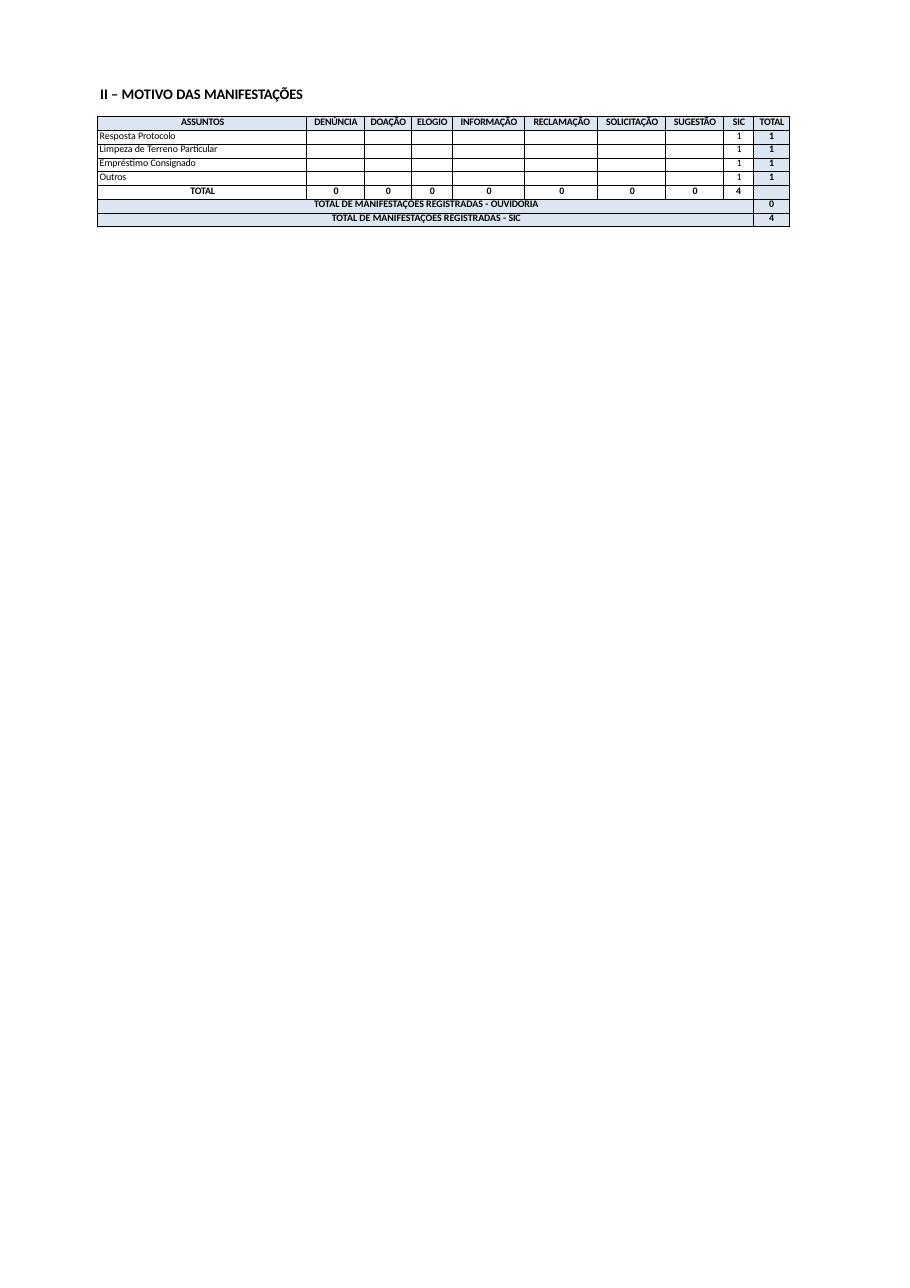
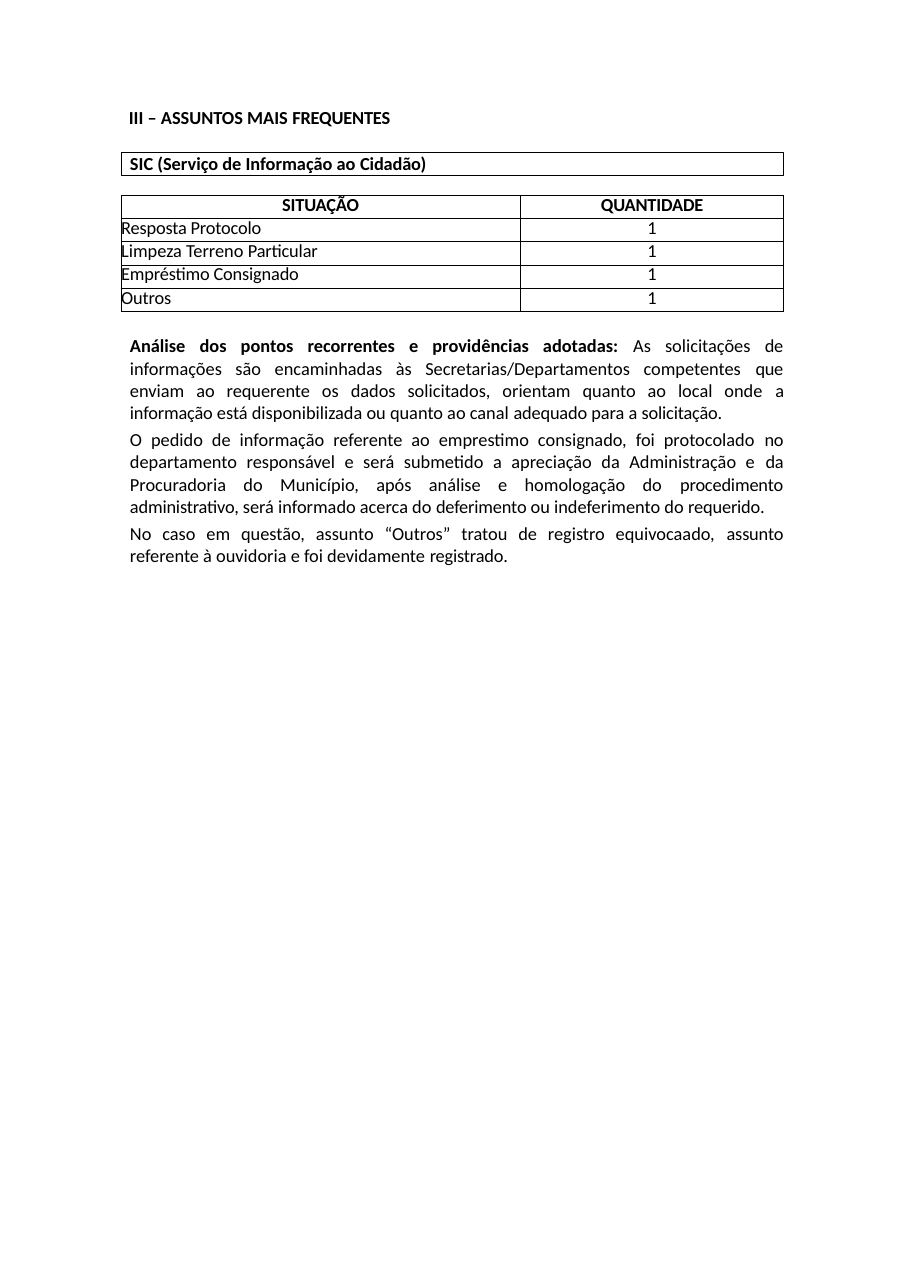
from dataclasses import dataclass
from typing import Any

from lxml import etree
from pptx import Presentation, util as u
from pptx.dml import color
from pptx.enum import shapes, text
from pptx.oxml import ns

# Shared look: lengths are px, 200 to the inch
PX = 4572
FONT = "Calibri"
BLACK = "000000"
BAND = "DCE6F0"
LEFT, CENTER, JUSTIFY = text.PP_ALIGN.LEFT, text.PP_ALIGN.CENTER, text.PP_ALIGN.JUSTIFY


@dataclass(frozen=True)
class Run:
    text: str
    bold: bool = False
    spacing: float = 0
    ends_line: bool = False


@dataclass(frozen=True)
class Style:
    size: float
    align: Any = LEFT
    indent: int = 0
    line: Any = 1.0
    before: float = 0


@dataclass(frozen=True)
class Cell:
    runs: tuple[Run, ...] = ()
    align: Any = CENTER
    indent: int = 0
    fill: str = ""
    span: int = 1


@dataclass(frozen=True)
class Grid:
    left: int
    top: int
    columns: tuple[int, ...]
    row_height: int
    size: float
    line: float
    border: float


def px(length: int) -> u.Emu:
    return u.Emu(length * PX)


def rgb(value: str) -> color.RGBColor:
    return color.RGBColor.from_string(value)


def phrase(plain: str, tight: str, bold: bool = False, spacing: float = -0.1) -> tuple[Run, ...]:
    """Words whose last part is set a little tighter."""
    runs = (Run(plain, bold), Run(tight, bold, spacing))
    return tuple(run for run in runs if run.text)


# Text
def write(paragraph: Any, runs: tuple[Run, ...], style: Style) -> None:
    paragraph.alignment = style.align
    paragraph.line_spacing = style.line
    paragraph.space_before = u.Pt(style.before)
    properties = paragraph._p.get_or_add_pPr()
    properties.set("marL", str(px(style.indent)))
    properties.set("indent", "0")
    size = str(int(style.size * 100))
    for item in runs:
        run = paragraph.add_run()
        run.text = item.text
        run.font.name = FONT
        run.font.size = u.Pt(style.size)
        run.font.bold = item.bold
        run.font.color.rgb = rgb(BLACK)
        if item.spacing:
            run._r.get_or_add_rPr().set("spc", str(round(item.spacing * 100)))
        if item.ends_line:
            line_break = etree.SubElement(paragraph._p, ns.qn("a:br"))
            etree.SubElement(line_break, ns.qn("a:rPr"), sz=size)
    if not runs:
        etree.SubElement(paragraph._p, ns.qn("a:endParaRPr"), sz=size)


def prepare_frame(shape: Any, top_inset: int = 0) -> Any:
    frame = shape.text_frame
    frame.word_wrap = True
    frame.auto_size = text.MSO_AUTO_SIZE.SHAPE_TO_FIT_TEXT
    frame.vertical_anchor = text.MSO_ANCHOR.TOP
    frame.margin_left = frame.margin_right = frame.margin_bottom = 0
    frame.margin_top = px(top_inset)
    return frame


def add_titled_slide(presentation: Any, runs: tuple[Run, ...], style: Style,
                     box: tuple[int, int, int, int], top_inset: int) -> Any:
    slide = presentation.slides.add_slide(presentation.slide_layouts[5])
    title = slide.shapes.title
    title.left, title.top, title.width, title.height = map(px, box)
    write(prepare_frame(title, top_inset).paragraphs[0], runs, style)
    return slide


# Tables
def add_borders(cell: Any, width: float) -> None:
    properties = cell._tc.get_or_add_tcPr()
    for side in ("lnL", "lnR", "lnT", "lnB"):
        line = etree.SubElement(properties, ns.qn(f"a:{side}"), w=str(u.Pt(width)))
        fill = etree.SubElement(line, ns.qn("a:solidFill"))
        etree.SubElement(fill, ns.qn("a:srgbClr"), val=BLACK)


def format_cell(cell: Any, content: Cell, grid: Grid) -> None:
    cell.margin_left = cell.margin_right = cell.margin_top = cell.margin_bottom = 0
    cell.vertical_anchor = text.MSO_ANCHOR.TOP
    add_borders(cell, grid.border)
    if content.fill:
        cell.fill.solid()
        cell.fill.fore_color.rgb = rgb(content.fill)
    else:
        cell.fill.background()
    style = Style(grid.size, content.align, content.indent, u.Pt(grid.line))
    write(cell.text_frame.paragraphs[0], content.runs, style)


def add_grid(slide: Any, grid: Grid, rows: list[list[Cell]]) -> None:
    table = slide.shapes.add_table(
        len(rows), len(grid.columns), px(grid.left), px(grid.top),
        px(sum(grid.columns)), px(grid.row_height * len(rows))).table
    table.first_row = table.horz_banding = False
    for column, width in zip(table.columns, grid.columns):
        column.width = px(width)
    for row_index, contents in enumerate(rows):
        table.rows[row_index].height = px(grid.row_height)
        column_index = 0
        for content in contents:
            first = table.cell(row_index, column_index)
            for offset in range(content.span):
                covered = Cell(fill=content.fill)
                format_cell(table.cell(row_index, column_index + offset),
                            covered if offset else content, grid)
            if content.span > 1:
                first.merge(table.cell(row_index, column_index + content.span - 1))
            column_index += content.span


# Slide 1: reasons by kind of request
def reasons_slide(presentation: Any) -> None:
    slide = add_titled_slide(
        presentation, phrase("II – MOTIVO DAS ", "MANIFESTAÇÕES", True),
        Style(9.5, indent=2, before=1.3), (180, 150, 396, 38), 4)
    headings = ("ASSUNTOS", "DENÚNCIA", "DOAÇÃO", "ELOGIO", "INFORMAÇÃO", "RECLAMAÇÃO",
                "SOLICITAÇÃO", "SUGESTÃO", "SIC", "TOTAL")
    subjects = (("Resposta ", "Protocolo"), ("Limpeza de Terreno ", "Particular"),
                ("Empréstimo ", "Consignado"), ("", "Outros"))

    def bold_cell(words: str, spacing: float = -0.5, fill: str = "") -> Cell:
        return Cell((Run(words, True, spacing),), indent=2, fill=fill)

    rows = [[bold_cell(heading, -0.1, BAND) for heading in headings]]
    for subject in subjects:
        rows.append([Cell(phrase(*subject), LEFT, 4), *[Cell()] * 7,
                     Cell((Run("1", spacing=-0.5),), indent=2),
                     Cell((Run("1", True, -0.5),), fill=BAND)])
    rows.append([bold_cell("TOTAL", -0.1), *[bold_cell("0")] * 7,
                 Cell((Run("4", True, -0.5),)), Cell(fill=BAND)])
    for channel, spacing, count in (("OUVIDORIA", -0.1, "0"), ("SIC", -0.2, "4")):
        label = phrase("TOTAL DE MANIFESTAÇÕES REGISTRADAS - ", channel, True, spacing)
        rows.append([Cell(label, indent=2, fill=BAND, span=9),
                     Cell((Run(count, True, -0.5),), fill=BAND)])
    columns = (380, 104, 86, 74, 132, 132, 124, 104, 56, 64)
    add_grid(slide, Grid(177, 212, columns, 25, 6.5, 7.5, 0.75), rows)


# Slide 2: most frequent subjects
def subjects_slide(presentation: Any) -> None:
    slide = add_titled_slide(
        presentation, phrase("III – ASSUNTOS MAIS ", "FREQUENTES", True),
        Style(12, indent=2, before=1), (232, 190, 484, 46), 2)

    subjects = (("", "Resposta Protocolo"), ("Limpeza Terreno ", "Particular"),
                ("", "Empréstimo Consignado"), ("", "Outros"))
    rows = [[Cell((Run("SITUAÇÃO", True, -0.1),)),
             Cell((Run("QUANTIDADE", True, -0.1),), indent=2)]]
    for subject in subjects:
        rows.append([Cell(phrase(*subject), LEFT),
                     Cell((Run("1", spacing=-0.5),), indent=2)])
    add_grid(slide, Grid(220, 355, (724, 478), 42, 12, 13.7, 0.5), rows)

    # Analysis
    analysis = (
        (Run("Análise dos pontos recorrentes e providências adotadas: ", True),
         Run("As solicitações "), Run("de", spacing=-0.2, ends_line=True),
         Run("informações são encaminhadas às Secretarias/Departamentos competentes "),
         Run("que", spacing=-0.2, ends_line=True),
         *phrase("enviam ao requerente os dados solicitados, orientam quanto ao local onde ",
                 "a ", spacing=-0.5),
         *phrase("", "informação "),
         *phrase("está disponibilizada ou quanto ao canal ", "adequado "),
         *phrase("para a ", "solicitação.")),
        (*phrase("O pedido de informação referente ao emprestimo consignado, foi protocolado ",
                 "no ", spacing=-0.2),
         *phrase("departamento responsável e será submetido a apreciação da Administração e ",
                 "da ", spacing=-0.2),
         Run("Procuradoria do Município, após análise e homologação do "),
         Run("procedimento", spacing=-0.1, ends_line=True),
         *phrase("", "administrativo, "),
         *phrase("será informado acerca do ", "deferimento "),
         *phrase("ou indeferimento do ", "requerido.")),
        (*phrase("No caso em questão, assunto “Outros” tratou de registro equivocaado, ",
                 "assunto "),
         *phrase("referente à ouvidoria e foi devidamente ", "registrado.")),
    )
    body = slide.shapes.add_textbox(px(234), px(604), px(1188), px(426))
    frame = prepare_frame(body, 2)
    for index, runs in enumerate(analysis):
        paragraph = frame.add_paragraph() if index else frame.paragraphs[0]
        write(paragraph, runs, Style(12, JUSTIFY, 2, 1.02, 2.6 if index else 0.8))

    # Service box
    service = slide.shapes.add_shape(
        shapes.MSO_SHAPE.RECTANGLE, px(220), px(276), px(1202), px(42))
    service.shadow.inherit = False
    service.fill.background()
    service.line.color.rgb = rgb(BLACK)
    service.line.width = u.Pt(0.48)
    write(prepare_frame(service).paragraphs[0],
          phrase("SIC (Serviço de Informação ao ", "Cidadão)", True),
          Style(12, indent=16, line=u.Pt(14.4)))


def main() -> None:
    presentation = Presentation()
    presentation.slide_width, presentation.slide_height = px(1652), px(2338)
    reasons_slide(presentation)
    subjects_slide(presentation)
    presentation.save("out.pptx")


if __name__ == "__main__":
    main()
